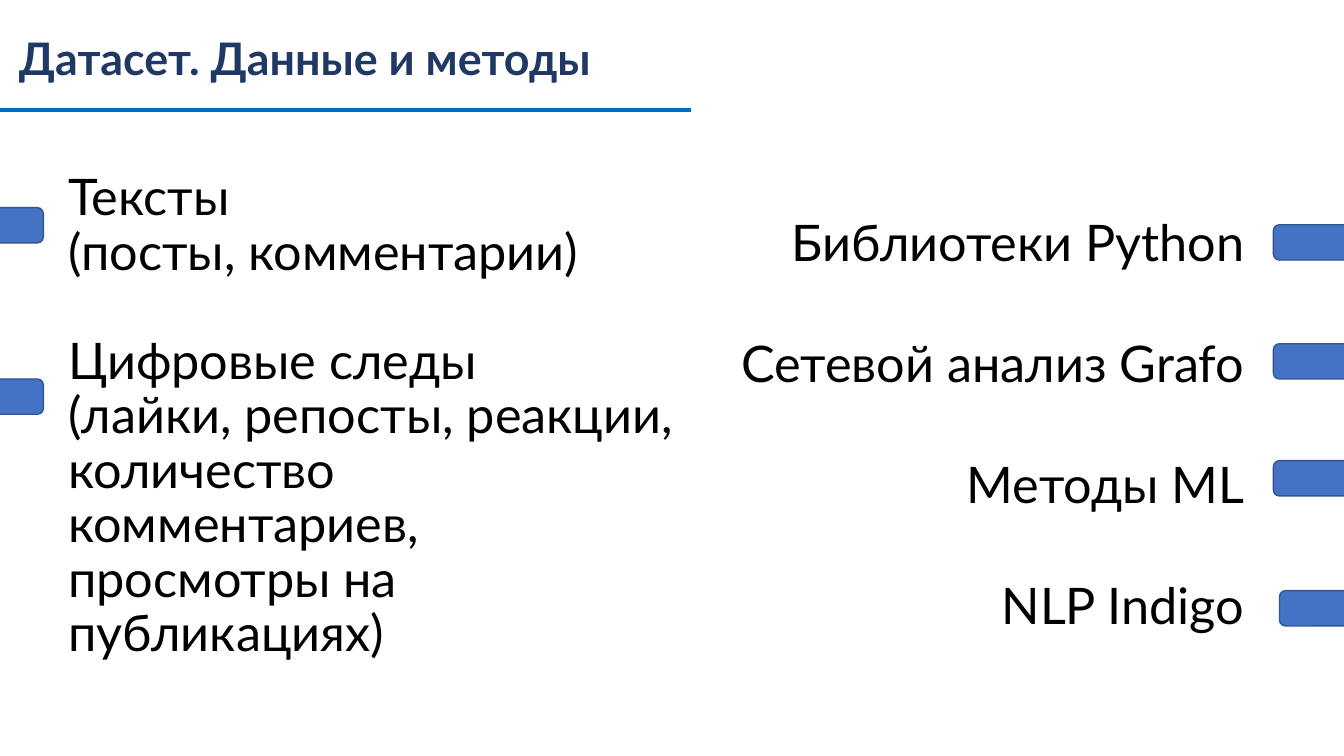
from dataclasses import dataclass

from lxml import etree
from pptx import Presentation
from pptx.dml.color import RGBColor
from pptx.enum.shapes import MSO_CONNECTOR, MSO_SHAPE
from pptx.enum.text import MSO_ANCHOR, PP_ALIGN
from pptx.oxml.ns import qn
from pptx.util import Inches, Pt

STRAIGHT = MSO_CONNECTOR.STRAIGHT
ROUNDED = MSO_SHAPE.ROUNDED_RECTANGLE
TOP, MIDDLE = MSO_ANCHOR.TOP, MSO_ANCHOR.MIDDLE
LEFT, RIGHT = PP_ALIGN.LEFT, PP_ALIGN.RIGHT

TITLE = "Датасет. Данные и методы"
DATA_GROUPS = [
    ["Тексты", "(посты, комментарии)"],
    [
        "Цифровые следы",
        "(лайки, репосты, реакции, количество комментариев, просмотры на публикациях)",
    ],
]
METHOD_GROUPS = [
    ["Библиотеки Python"],
    ["Сетевой анализ Grafo"],
    ["Методы ML"],
    ["NLP Indigo"],
]

# Left and top of each tab, in inches; the tabs run past the slide edges
TAB_SIZE = (1.52, 0.35)
TABS = [
    (-1.09, 2.06), (-1.09, 3.76),
    (12.63, 2.23), (12.63, 3.41), (12.63, 4.57), (12.69, 5.86),
]


@dataclass(frozen=True)
class Theme:
    font: str = "Lato"
    title_size: int = 32
    body_size: int = 36
    title: RGBColor = RGBColor(0x20, 0x38, 0x64)
    body: RGBColor = RGBColor(0, 0, 0)
    rule: RGBColor = RGBColor(0x00, 0x6F, 0xC0)
    tab: RGBColor = RGBColor(0x44, 0x72, 0xC4)
    tab_line: RGBColor = RGBColor(0x32, 0x54, 0x91)


THEME = Theme()


def add_text(slide, box, groups, size, color, bold=False,
             align=LEFT, anchor=TOP, line_spacing=1.0):
    """Write groups of paragraphs, with one line of space between groups."""
    frame = slide.shapes.add_textbox(*map(Inches, box)).text_frame
    frame.word_wrap = True
    frame.vertical_anchor = anchor
    group_gap = Pt(round(size * 1.2 * line_spacing))
    paragraph = None
    for group_index, group in enumerate(groups):
        for line_index, text in enumerate(group):
            paragraph = frame.add_paragraph() if paragraph else frame.paragraphs[0]
            paragraph.alignment = align
            paragraph.line_spacing = line_spacing
            starts_new_group = group_index > 0 and line_index == 0
            paragraph.space_before = group_gap if starts_new_group else Pt(0)
            run = paragraph.add_run()
            run.text = text
            run.font.name = THEME.font
            run.font.size = Pt(size)
            run.font.bold = bold
            run.font.color.rgb = color


def add_title_rule(slide):
    rule = slide.shapes.add_connector(
        STRAIGHT, Inches(0), Inches(1.09), Inches(6.85), Inches(1.09))
    rule.line.color.rgb = THEME.rule
    rule.line.width = Pt(3)
    etree.SubElement(rule._element.spPr, qn("a:effectLst"))


def add_tab(slide, left, top):
    tab = slide.shapes.add_shape(ROUNDED, *map(Inches, (left, top, *TAB_SIZE)))
    tab.shadow.inherit = False
    tab.fill.solid()
    tab.fill.fore_color.rgb = THEME.tab
    tab.line.color.rgb = THEME.tab_line
    tab.line.width = Pt(1)


def main():
    presentation = Presentation()
    presentation.slide_width = Inches(13.33)
    presentation.slide_height = Inches(7.5)
    slide = presentation.slides.add_slide(presentation.slide_layouts[6])

    add_title_rule(slide)
    add_text(slide, (0.09, 0.01, 7.36, 1.19), [[TITLE]], THEME.title_size,
             THEME.title, bold=True, anchor=MIDDLE, line_spacing=0.9)
    add_text(slide, (0.58, 1.66, 6.2, 5.11), DATA_GROUPS, THEME.body_size,
             THEME.body, line_spacing=0.9)
    add_text(slide, (5.42, 2.05, 7.02, 4.34), METHOD_GROUPS, THEME.body_size,
             THEME.body, align=RIGHT)
    for left, top in TABS:
        add_tab(slide, left, top)

    presentation.save("out.pptx")


if __name__ == "__main__":
    main()
